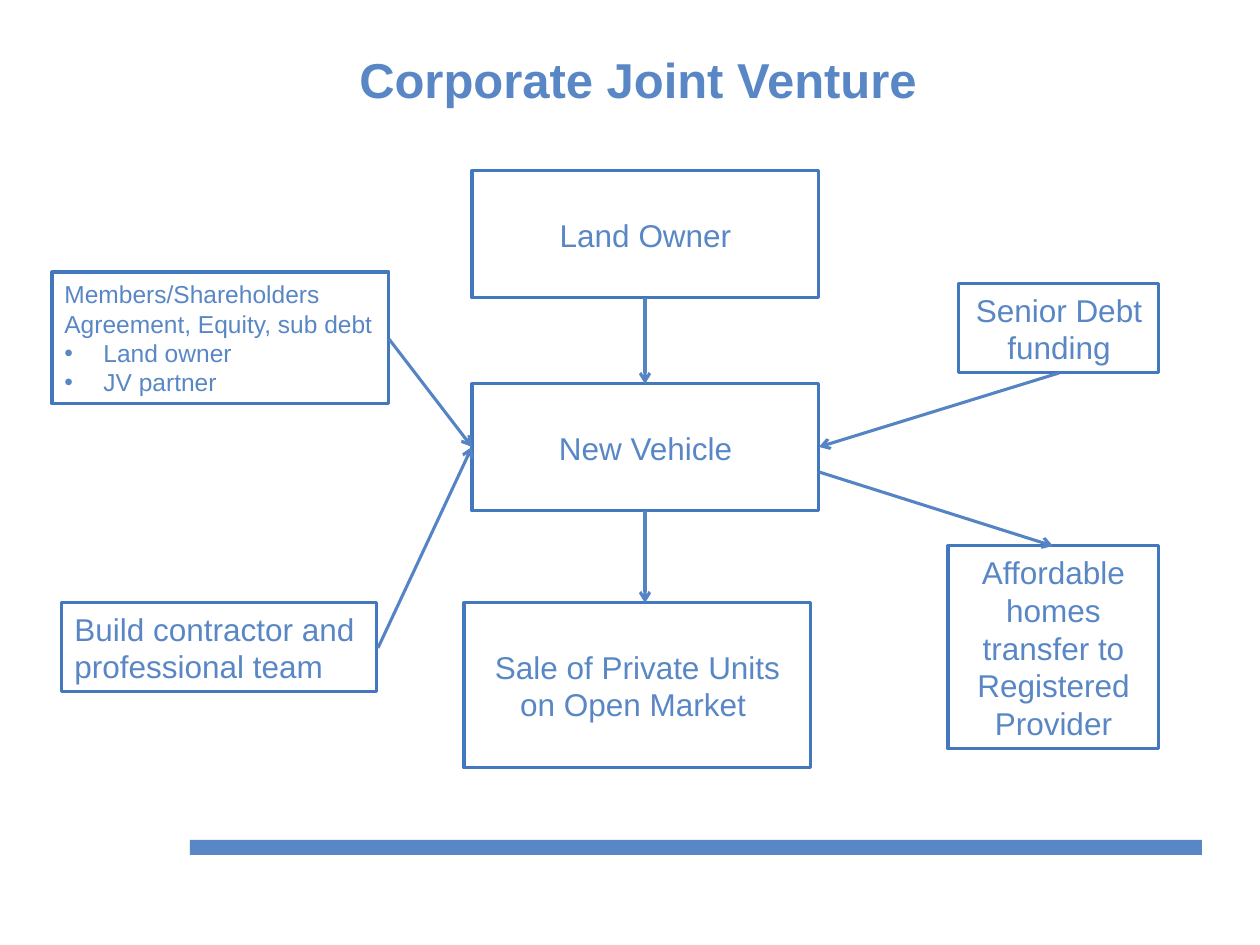
import pptx
import pptx.util
import pptx.dml.color
import pptx.enum.shapes
import pptx.enum.text
import pptx.oxml

PX = 914400 // 126
TEXT_BLUE = "5987C5"
BORDER_BLUE = "4377BE"
ARROW_BLUE = "5484C3"
LEFT = pptx.enum.text.PP_ALIGN.LEFT
CENTER = pptx.enum.text.PP_ALIGN.CENTER
NS = 'xmlns:a="http://schemas.openxmlformats.org/drawingml/2006/main"'


def paint(color_format, hex_color):
    color_format.rgb = pptx.dml.color.RGBColor.from_string(hex_color)


def write(paragraph, text, size, align, bold=False):
    paragraph.alignment = align
    run = paragraph.add_run()
    run.text = text
    run.font.name = "Arial"
    run.font.size = pptx.util.Pt(size)
    run.font.bold = bold
    paint(run.font.color, TEXT_BLUE)


deck = pptx.Presentation()
deck.slide_width = 1260 * PX
deck.slide_height = 945 * PX
slide = deck.slides.add_slide(deck.slide_layouts[6])
rectangle = pptx.enum.shapes.MSO_SHAPE.RECTANGLE

footer_bar = slide.shapes.add_shape(rectangle, 190 * PX, 840 * PX, 1012 * PX, 15 * PX)
footer_bar.shadow.inherit = False
footer_bar.fill.solid()
paint(footer_bar.fill.fore_color, TEXT_BLUE)
footer_bar.line.fill.background()

title = slide.shapes.add_textbox(302 * PX, 43 * PX, 672 * PX, 72 * PX)
title.text_frame.word_wrap = True
write(title.text_frame.paragraphs[0], "Corporate Joint Venture", 28, CENTER, True)

parties = [
    (472, 171, 347, 127, 18, CENTER, "Land Owner", []),
    (472, 384, 347, 127, 18, CENTER, "New Vehicle", []),
    (464, 603, 347, 165, 18, CENTER, "Sale of Private Units on Open Market ", []),
    (52, 272, 337, 132, 14, LEFT, "Members/Shareholders Agreement, Equity, sub debt",
     ["Land owner", "JV partner"]),
    (62, 603, 315, 89, 18, LEFT, "Build contractor and professional team", []),
    (959, 284, 200, 89, 18, CENTER, "Senior Debt funding", []),
    (948, 546, 211, 203, 18, CENTER,
     "Affordable homes transfer to Registered Provider", []),
]
for left, top, width, height, size, align, wording, members in parties:
    party = slide.shapes.add_shape(rectangle, left * PX, top * PX, width * PX, height * PX)
    party.shadow.inherit = False
    party.fill.background()
    paint(party.line.color, BORDER_BLUE)
    party.line.width = pptx.util.Pt(1.75)
    frame = party.text_frame
    frame.word_wrap = True
    frame.vertical_anchor = pptx.enum.text.MSO_ANCHOR.MIDDLE
    write(frame.paragraphs[0], wording, size, align)
    for member in members:
        paragraph = frame.add_paragraph()
        properties = paragraph._p.get_or_add_pPr()
        properties.set("marL", str(39 * PX))
        properties.set("indent", str(-39 * PX))
        properties.append(pptx.oxml.parse_xml(f'<a:buFont {NS} typeface="Arial"/>'))
        properties.append(pptx.oxml.parse_xml(f'<a:buChar {NS} char="•"/>'))
        write(paragraph, member, size, align)

flows = [
    (645, 298, 645, 384),
    (645, 511, 645, 603),
    (389, 339, 472, 447),
    (378, 648, 472, 447),
    (1059, 373, 819, 447),
    (819, 472, 1053, 546),
]
for start_x, start_y, end_x, end_y in flows:
    flow = slide.shapes.add_connector(
        pptx.enum.shapes.MSO_CONNECTOR.STRAIGHT,
        start_x * PX, start_y * PX, end_x * PX, end_y * PX)
    paint(flow.line.color, ARROW_BLUE)
    flow.line.width = pptx.util.Pt(1.75)
    flow.line._get_or_add_ln().append(
        pptx.oxml.parse_xml(f'<a:tailEnd {NS} type="arrow"/>'))
    flow._element.spPr.append(pptx.oxml.parse_xml(f"<a:effectLst {NS}/>"))

deck.save("out.pptx")
